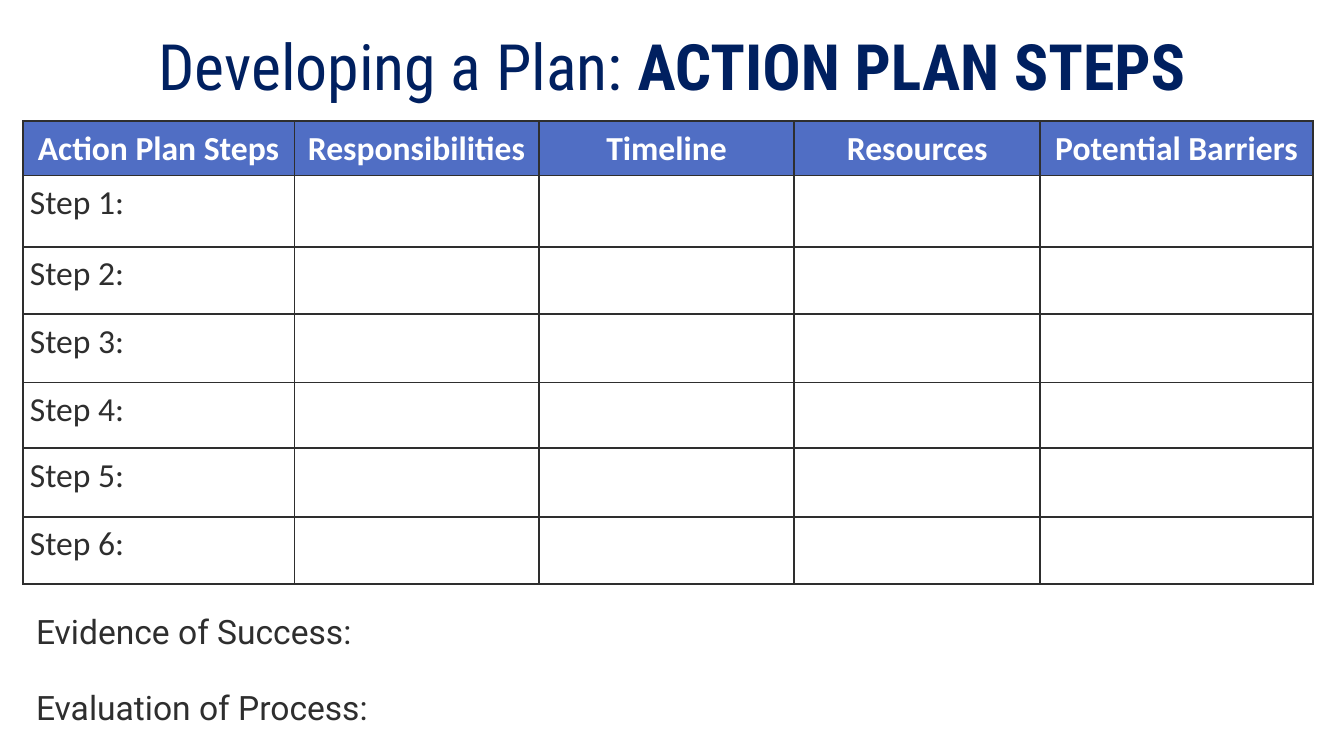
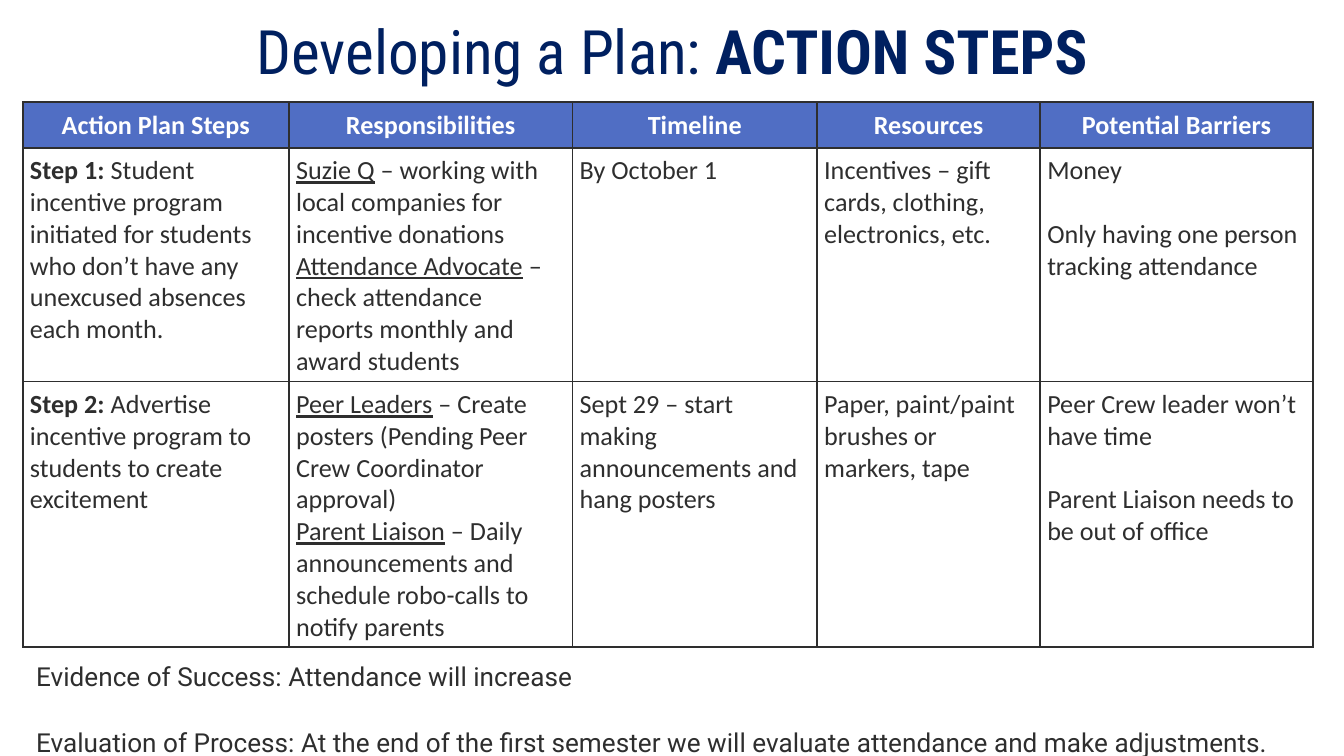
"""Build the two action plan slides."""
from dataclasses import dataclass

from lxml import etree
from pptx import Presentation
from pptx.dml.color import RGBColor
from pptx.enum import text
from pptx.oxml import ns
from pptx.util import Inches, Pt


@dataclass(frozen=True)
class Theme:
    """Colours, fonts and sizes shared by the slides."""
    navy: str = "002060"
    ink: str = "2E2E2E"
    header: str = "506EC4"
    white: str = "FFFFFF"
    title_font: str = "Roboto Condensed"
    note_font: str = "Roboto"
    table_font: str = "Calibri"
    border: float = 1
    cell_margin: float = 3.8
    left: float = 0.17
    title_left: float = 0.34
    title_width: float = 9.32
    note_spacing: float = 1.15
    note_gap: float = 16
    large: float = 18
    small: float = 14
    large_title: float = 34.2
    small_title: float = 32.8


THEME = Theme()
HEADINGS = ["Action Plan Steps", "Responsibilities", "Timeline", "Resources", "Potential Barriers"]


def write_text(frame, paragraphs, *, size, font, color, bold=False, align=text.PP_ALIGN.LEFT,
               gap=0, line_spacing=None):
    """Write paragraphs of runs; a run is a string or a (string, style) pair."""
    frame.word_wrap = True
    for index, runs in enumerate(paragraphs):
        paragraph = frame.add_paragraph() if index else frame.paragraphs[0]
        paragraph.alignment = align
        if line_spacing:
            paragraph.line_spacing = line_spacing
        if index and gap:
            paragraph.space_before = Pt(gap)
        for item in [runs] if isinstance(runs, str) else runs:
            words, style = (item, "") if isinstance(item, str) else item
            run = paragraph.add_run()
            run.text = words
            run.font.size = Pt(size)
            run.font.name = font
            run.font.color.rgb = RGBColor.from_string(color)
            run.font.bold = bold or style == "bold"
            run.font.underline = style == "underline"


def add_text(slide, box, paragraphs, **text_format):
    """Add a text box with even margins."""
    frame = slide.shapes.add_textbox(*map(Inches, box)).text_frame
    frame.margin_left = frame.margin_right = Inches(0.1)
    frame.margin_top = frame.margin_bottom = Inches(0.1)
    frame.vertical_anchor = text.MSO_ANCHOR.TOP
    write_text(frame, paragraphs, **text_format)


def add_title(slide, ending, top, height, size):
    """Add the shared title with its bold ending."""
    add_text(slide, (THEME.title_left, top, THEME.title_width, height),
             [["Developing a Plan: ", (ending, "bold")]],
             size=size, font=THEME.title_font, color=THEME.navy, align=text.PP_ALIGN.CENTER)


def add_notes(slide, box, paragraphs, size):
    """Add the evidence and evaluation lines."""
    add_text(slide, box, paragraphs, size=size, font=THEME.note_font, color=THEME.ink,
             gap=THEME.note_gap, line_spacing=THEME.note_spacing)


def draw_borders(cell):
    """Draw a thin line on each side of a cell."""
    properties = cell._tc.get_or_add_tcPr()
    for index, side in enumerate(("lnL", "lnR", "lnT", "lnB")):
        line = etree.Element(ns.qn(f"a:{side}"), w=str(Pt(THEME.border)))
        fill = etree.SubElement(line, ns.qn("a:solidFill"))
        etree.SubElement(fill, ns.qn("a:srgbClr"), val=THEME.ink)
        properties.insert(index, line)


def add_plan_table(slide, top, widths, heights, rows, size, gap=0):
    """Add a plan table; each body cell is a list of paragraphs."""
    table = slide.shapes.add_table(len(heights), len(widths), Inches(THEME.left), Inches(top),
                                   Inches(sum(widths)), Inches(sum(heights))).table
    table.first_row = table.horz_banding = False
    for column, width in zip(table.columns, widths):
        column.width = Inches(width)
    for row, height in zip(table.rows, heights):
        row.height = Inches(height)
    for row_index, contents in enumerate([[[heading] for heading in HEADINGS]] + rows):
        is_header = row_index == 0
        for column_index, paragraphs in enumerate(contents):
            cell = table.cell(row_index, column_index)
            cell.margin_left = cell.margin_right = Pt(THEME.cell_margin)
            cell.margin_top = cell.margin_bottom = Pt(THEME.cell_margin)
            if is_header:
                cell.fill.solid()
                cell.fill.fore_color.rgb = RGBColor.from_string(THEME.header)
            else:
                cell.fill.background()
            draw_borders(cell)
            write_text(cell.text_frame, paragraphs, size=size, font=THEME.table_font,
                       color=THEME.white if is_header else THEME.ink, bold=is_header,
                       align=text.PP_ALIGN.CENTER if is_header else text.PP_ALIGN.LEFT,
                       gap=gap if column_index == len(HEADINGS) - 1 else 0)


def build_template_slide(slide):
    """Build the empty plan with six steps."""
    add_notes(slide, (THEME.left, 4.4, 9.49, 1.22),
              ["Evidence of Success:", "Evaluation of Process:"], THEME.large)
    add_title(slide, "ACTION PLAN STEPS", 0.1, 0.81, THEME.large_title)
    steps = [[[f"Step {number}:"], [], [], [], []] for number in range(1, 7)]
    add_plan_table(slide, 0.9, [2.02, 1.82, 1.9, 1.83, 2.03],
                   [0.36, 0.53, 0.5, 0.51, 0.49, 0.51, 0.5], steps, THEME.large)


def build_example_slide(slide):
    """Build the plan filled in with two steps."""
    add_notes(slide, (THEME.left, 4.78, 9.83, 0.84),
              ["Evidence of Success: Attendance will increase",
               "Evaluation of Process: At the end of the first semester we will evaluate "
               "attendance and make adjustments."], THEME.small)
    add_title(slide, "ACTION STEPS", 0, 0.76, THEME.small_title)
    steps = [
        [[[("Step 1: ", "bold"), "Student incentive program initiated for students who don’t "
           "have any unexcused absences each month."]],
         [[("Suzie Q", "underline"), " – working with local companies for incentive donations"],
          [("Attendance Advocate", "underline"),
           " – check attendance reports monthly and award students"]],
         ["By October 1"],
         ["Incentives – gift cards, clothing, electronics, etc."],
         ["Money", "Only having one person tracking attendance"]],
        [[[("Step 2: ", "bold"), "Advertise incentive program to students to create excitement"]],
         [[("Peer Leaders", "underline"),
           " – Create posters (Pending Peer Crew Coordinator approval)"],
          [("Parent Liaison", "underline"),
           " – Daily announcements and schedule robo-calls to notify parents"]],
         ["Sept 29 – start making announcements and hang posters"],
         ["Paper, paint/paint brushes or markers, tape"],
         ["Peer Crew leader won’t have time", "Parent Liaison needs to be out of office"]],
    ]
    add_plan_table(slide, 0.76, [1.98, 2.11, 1.82, 1.66, 2.03], [0.32, 1.73, 1.92], steps,
                   THEME.small, gap=17)


def main():
    """Create and save the presentation."""
    presentation = Presentation()
    presentation.slide_width = Inches(10)
    presentation.slide_height = Inches(10) * 9 // 16
    for build_slide in (build_template_slide, build_example_slide):
        build_slide(presentation.slides.add_slide(presentation.slide_layouts[6]))
    presentation.save("out.pptx")


if __name__ == "__main__":
    main()
